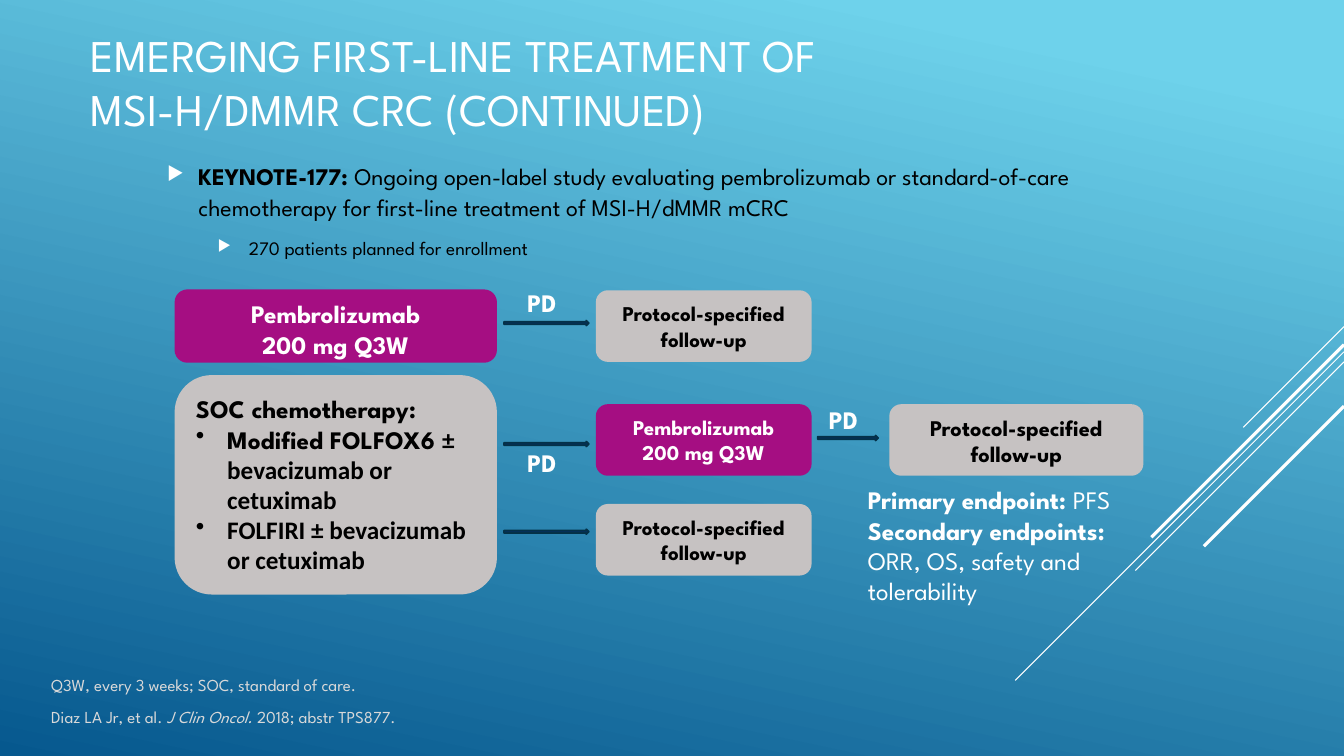
import pptx
import pptx.util
import pptx.dml.color
import pptx.enum.shapes
import pptx.enum.text
from lxml import etree

Inches, Pt = pptx.util.Inches, pptx.util.Pt
SHAPE = pptx.enum.shapes.MSO_SHAPE
ALIGN = pptx.enum.text.PP_ALIGN
ANCHOR = pptx.enum.text.MSO_ANCHOR
DRAWING_NS = "{http://schemas.openxmlformats.org/drawingml/2006/main}"

FONT = "League Spartan"
COLORS = {
    "sky": "6ED2EB", "deep": "06588E", "white": "FFFFFF", "black": "000000",
    "pale": "D9D9D9", "magenta": "A50E82", "grey": "C6C2C2",
    "arrow": "052F61", "arrow_edge": "043148",
}
SLIDE_W, SLIDE_H = 13.33, 7.5


def rgb(name):
    return pptx.dml.color.RGBColor.from_string(COLORS[name])


def add_bullet(paragraph, char, indent, left, color=None, percent=None):
    """Give a paragraph a hanging bullet."""
    props = paragraph._p.get_or_add_pPr()
    props.set("marL", str(Inches(left)))
    props.set("indent", str(-Inches(indent)))
    if color:
        holder = etree.SubElement(props, DRAWING_NS + "buClr")
        etree.SubElement(holder, DRAWING_NS + "srgbClr", val=COLORS[color])
    if percent:
        etree.SubElement(props, DRAWING_NS + "buSzPct", val=str(percent * 1000))
    etree.SubElement(props, DRAWING_NS + "buChar", char=char)


def style(paragraph, size, color, bold=None, align=ALIGN.LEFT, font=FONT):
    paragraph.alignment = align
    paragraph.font.size = Pt(size)
    paragraph.font.name = font
    paragraph.font.bold = bold
    paragraph.font.color.rgb = rgb(color)


def add_run(paragraph, text, bold=None, italic=None, font=None):
    run = paragraph.add_run()
    run.text = text
    run.font.bold = bold
    run.font.italic = italic
    if font:
        run.font.name = font


def next_paragraph(frame, index):
    return frame.add_paragraph() if index else frame.paragraphs[0]


def text_frame(slide, box, anchor=ANCHOR.TOP):
    frame = slide.shapes.add_textbox(*map(Inches, box)).text_frame
    frame.word_wrap = True
    frame.vertical_anchor = anchor
    return frame


def add_backdrop(slide):
    # Diagonal gradient
    fill = slide.background.fill
    fill.gradient()
    fill.gradient_angle = 258
    for stop, position, color in zip(fill.gradient_stops, (0.1, 1), ("sky", "deep")):
        stop.position = position
        stop.color.rgb = rgb(color)
    # 45-degree rays from the right edge: start height, run, weight
    for top, run, weight in ((3.24, 1, 0.75), (3.49, 3.26, 0.75), (3.59, 2.07, 0.75),
                             (3.42, 1.91, 2.25), (4.03, 1.39, 2.25)):
        ray = slide.shapes.add_connector(
            pptx.enum.shapes.MSO_CONNECTOR.STRAIGHT, Inches(SLIDE_W), Inches(top),
            Inches(SLIDE_W - run), Inches(top + run))
        ray.line.color.rgb = rgb("white")
        ray.line.width = Pt(weight)
        etree.SubElement(ray._element.spPr, DRAWING_NS + "effectLst")


def add_title(slide, box):
    title = slide.shapes.title
    title.left, title.top, title.width, title.height = map(Inches, box)
    frame = title.text_frame
    frame.auto_size = pptx.enum.text.MSO_AUTO_SIZE.NONE
    frame.vertical_anchor = ANCHOR.MIDDLE
    frame.text = "EMERGING FIRST-LINE TREATMENT OF\vMSI-H/DMMR CRC (CONTINUED)"
    style(frame.paragraphs[0], 32.4, "white")


def add_study_summary(slide, box):
    frame = text_frame(slide, box, ANCHOR.MIDDLE)
    rows = (
        (17, 0.31, (("KEYNOTE-177: ", True),
                    ("Ongoing open-label study evaluating pembrolizumab or standard-of-care "
                     "chemotherapy for first-line treatment of MSI-H/dMMR mCRC", False))),
        (13.6, 0.81, (("270 patients planned for enrollment", False),)),
    )
    for level, (size, left, runs) in enumerate(rows):
        paragraph = next_paragraph(frame, level)
        paragraph.level = level
        add_bullet(paragraph, "▶", 0.31, left, "white", 80)
        paragraph.line_spacing = 1.1
        paragraph.space_before = Pt(3 * level)
        paragraph.space_after = Pt(6)
        style(paragraph, size, "black")
        for text, bold in runs:
            add_run(paragraph, text, bold)


def add_footnotes(slide, box):
    frame = text_frame(slide, box, ANCHOR.BOTTOM)
    notes = (
        (("Q3W, every 3 weeks; SOC, standard of care.", False),),
        (("Diaz LA Jr, et al. ", False), ("J Clin Oncol. ", True),
         ("2018; abstr TPS877.", False)),
    )
    for index, runs in enumerate(notes):
        paragraph = next_paragraph(frame, index)
        paragraph.space_before = Pt(2.4 * index)
        paragraph.space_after = Pt(6)
        style(paragraph, 12, "pale")
        for text, italic in runs:
            add_run(paragraph, text, italic=italic)


def add_card(slide, box, fill, inset_top, edge=False):
    """Rounded card; returns its text frame."""
    card = slide.shapes.add_shape(SHAPE.ROUNDED_RECTANGLE, *map(Inches, box))
    card.shadow.inherit = False
    card.fill.solid()
    card.fill.fore_color.rgb = rgb(fill)
    if edge:
        card.line.color.rgb = rgb(fill)
        card.line.width = Pt(1.25)
    else:
        card.line.fill.background()
    frame = card.text_frame
    frame.word_wrap = True
    frame.vertical_anchor = ANCHOR.TOP
    frame.margin_top, frame.margin_bottom = Inches(inset_top), 0
    return frame


def add_step(slide, box, lines, size, fill, inset_top, edge=False):
    frame = add_card(slide, box, fill, inset_top, edge)
    color = "white" if fill == "magenta" else "black"
    for index, line in enumerate(lines):
        paragraph = next_paragraph(frame, index)
        paragraph.text = line
        style(paragraph, size, color, True, ALIGN.CENTER)


def add_chemotherapy(slide, box):
    frame = add_card(slide, box, "grey", 0.07, edge=True)
    frame.margin_right = 0
    regimens = (
        (("SOC chemotherapy:", FONT),),
        (("Modified FOLFOX6 ", FONT), ("± bevacizumab or cetuximab", "Calibri")),
        (("FOLFIRI ± bevacizumab or cetuximab", "Calibri"),),
    )
    for index, runs in enumerate(regimens):
        paragraph = next_paragraph(frame, index)
        if index:
            add_bullet(paragraph, "•", 0.31, 0.31)
        style(paragraph, 18, "black", True, font=runs[0][1])
        for text, font in runs:
            add_run(paragraph, text, font=font)


def add_arrow(slide, left, top, width):
    arrow = slide.shapes.add_shape(
        SHAPE.RIGHT_ARROW, Inches(left), Inches(top), Inches(width), Inches(0.05))
    arrow.shadow.inherit = False
    arrow.fill.solid()
    arrow.fill.fore_color.rgb = rgb("arrow")
    arrow.line.color.rgb = rgb("arrow_edge")
    arrow.line.width = Pt(1.25)


def add_trial_flow(slide, left, top):
    pembrolizumab = ("Pembrolizumab", "200 mg Q3W")
    follow_up = ("Protocol-specified follow-up",)
    second, third, row = left + 4.17, left + 7.08, 0.71
    # Treatment arms
    add_step(slide, (left, top, 3.18, row), pembrolizumab, 18, "magenta", 0.05, edge=True)
    add_chemotherapy(slide, (left, top + 0.85, 3.18, 2.16))
    # Next steps
    for offset, lines, fill in ((0, follow_up, "grey"), (1.13, pembrolizumab, "magenta"),
                                (2.12, follow_up, "grey")):
        add_step(slide, (second, top + offset, 2.14, row), lines, 15, fill, 0.07)
    add_step(slide, (third, top + 1.13, 2.52, row), follow_up, 16, "grey", 0.06)
    # Arrows
    for offset in (0.3, 1.5, 2.37):
        add_arrow(slide, left + 3.26, top + offset, 0.84)
    add_arrow(slide, left + 6.37, top + 1.44, 0.6)
    # Progression labels
    for across, down in ((3.3, -0.08), (3.3, 1.51), (6.29, 1.08)):
        label = text_frame(slide, (left + across, top + down, 0.67, 0.4)).paragraphs[0]
        label.text = "PD"
        style(label, 18, "white", True, ALIGN.CENTER)


def add_endpoints(slide, box):
    frame = text_frame(slide, box)
    endpoints = (("Primary endpoint: ", "PFS"),
                 ("Secondary endpoints: ", "ORR, OS, safety and tolerability"))
    for index, (heading, measures) in enumerate(endpoints):
        paragraph = next_paragraph(frame, index)
        style(paragraph, 18, "white")
        add_run(paragraph, heading, True)
        add_run(paragraph, measures, False)


def main():
    deck = pptx.Presentation()
    deck.slide_width, deck.slide_height = Inches(SLIDE_W), Inches(SLIDE_H)
    slide = deck.slides.add_slide(deck.slide_layouts[5])
    add_backdrop(slide)
    add_title(slide, (0.8, 0.21, 9, 1.2))
    add_study_summary(slide, (1.56, 1.39, 9.72, 1.37))
    add_footnotes(slide, (0.41, 6.76, 7.65, 0.5))
    add_trial_flow(slide, 1.74, 2.88)
    add_endpoints(slide, (8.51, 4.76, 3.13, 1.31))
    deck.save("out.pptx")


if __name__ == "__main__":
    main()
